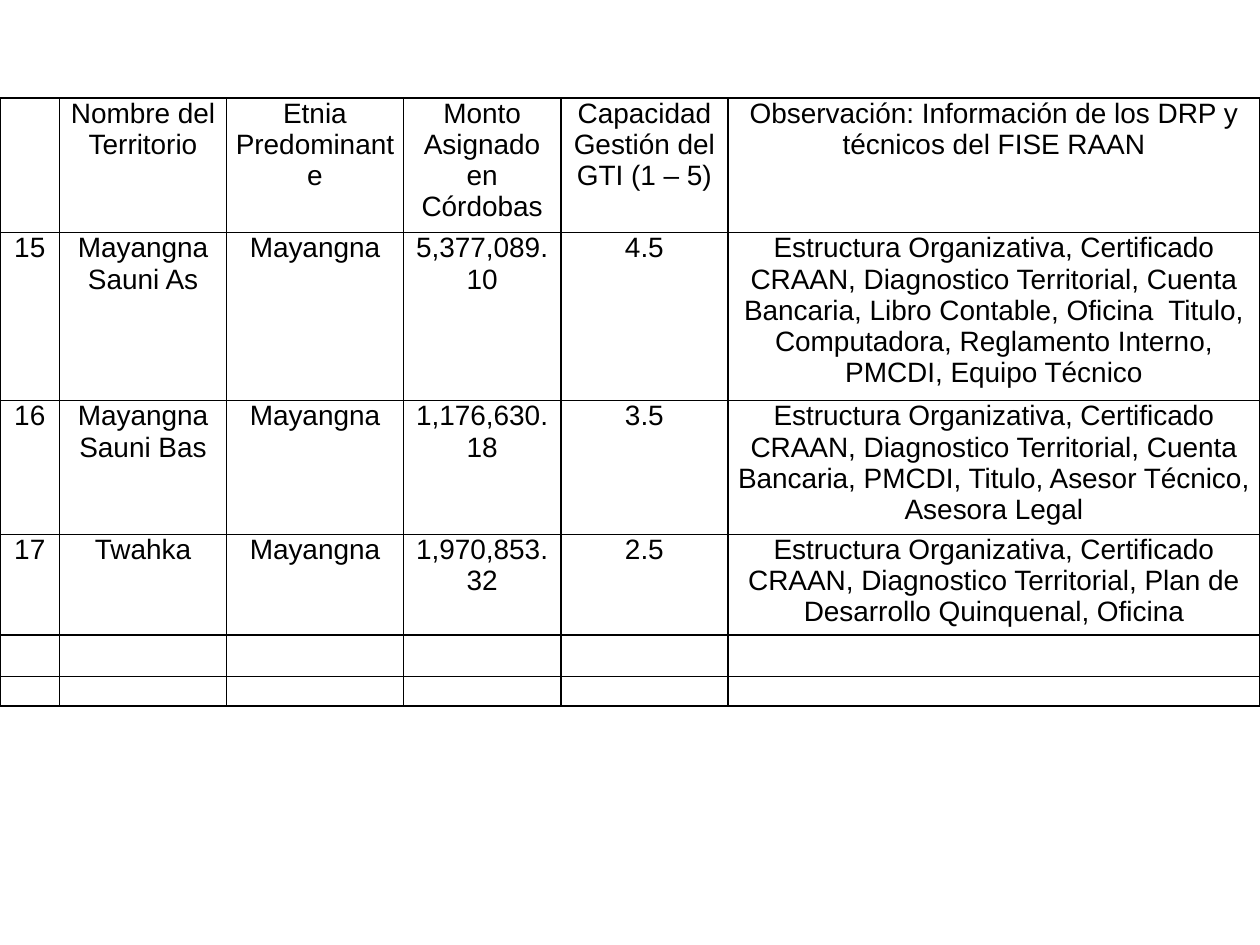
from lxml import etree
from pptx import Presentation
from pptx.dml.color import RGBColor
from pptx.enum import text
from pptx.oxml import ns
from pptx.util import Pt

COLORS = {"ink": "000000", "line": "000000"}
WIDTHS = [34, 95.5, 101, 90, 95.5, 304]
HEIGHTS = [77, 96, 76.5, 57.5, 23.5, 17]
BASE = "Estructura Organizativa, Certificado CRAAN, Diagnostico Territorial, "
ROWS = [
    ["", "Nombre del Territorio", "Etnia Predominante",
     "Monto Asignado en Córdobas", "Capacidad Gestión del GTI (1 – 5)",
     "Observación: Información de los DRP y técnicos del FISE RAAN"],
    ["15", "Mayangna Sauni As", "Mayangna", "5,377,089.10", "4.5",
     BASE + "Cuenta Bancaria, Libro Contable, Oficina  Titulo, "
     "Computadora, Reglamento Interno, PMCDI, Equipo Técnico"],
    ["16", "Mayangna Sauni Bas", "Mayangna", "1,176,630.18", "3.5",
     BASE + "Cuenta Bancaria, PMCDI, Titulo, Asesor Técnico, Asesora Legal"],
    ["17", "Twahka", "Mayangna", "1,970,853.32", "2.5",
     BASE + "Plan de Desarrollo Quinquenal, Oficina"],
    [""] * len(WIDTHS),
    [""] * len(WIDTHS),
]


def border(cell):
    props = cell._tc.get_or_add_tcPr()
    for spot, side in enumerate(("lnL", "lnR", "lnT", "lnB")):
        line = etree.Element(ns.qn("a:" + side), w=str(Pt(1)))
        fill = etree.SubElement(line, ns.qn("a:solidFill"))
        etree.SubElement(fill, ns.qn("a:srgbClr"), val=COLORS["line"])
        props.insert(spot, line)


deck = Presentation()
deck.slide_width, deck.slide_height = Pt(720), Pt(540)
slide = deck.slides.add_slide(deck.slide_layouts[6])
frame = slide.shapes.add_table(len(ROWS), len(WIDTHS), Pt(0), Pt(56),
                               Pt(sum(WIDTHS)), Pt(sum(HEIGHTS)))
table = frame.table
table.first_row = table.horz_banding = False
for col, width in zip(table.columns, WIDTHS):
    col.width = Pt(width)

for row, height, words in zip(table.rows, HEIGHTS, ROWS):
    row.height = Pt(height)
    for cell, word in zip(row.cells, words):
        cell.fill.background()
        border(cell)
        cell.margin_left = cell.margin_right = Pt(5)
        cell.margin_top = cell.margin_bottom = Pt(0)
        para = cell.text_frame.paragraphs[0]
        para.text = word
        para.alignment = text.PP_ALIGN.CENTER
        for run in para.runs:
            run.font.name = "Arial"
            run.font.size = Pt(16)
            run.font.color.rgb = RGBColor.from_string(COLORS["ink"])
        if not word:  # small type keeps empty rows low
            etree.SubElement(para._p, ns.qn("a:endParaRPr"), sz="1000")

deck.save("out.pptx")
